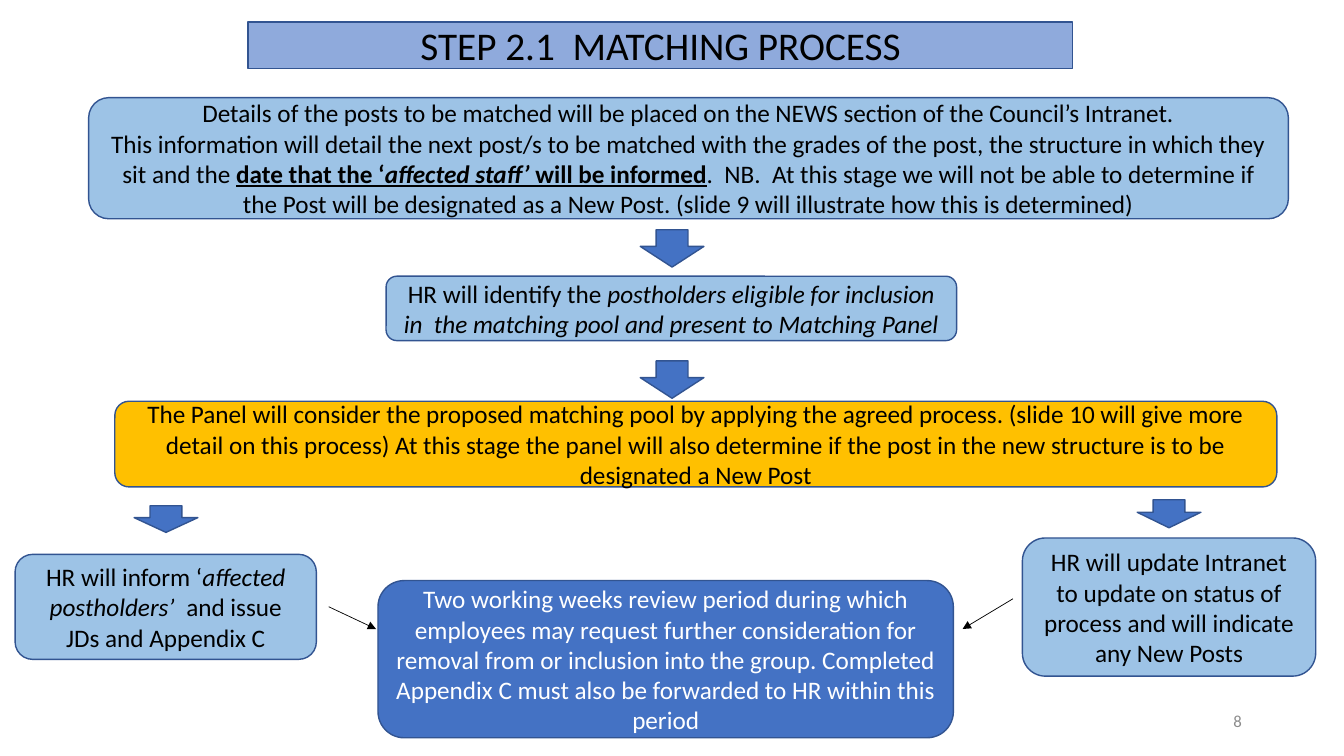
from dataclasses import dataclass

from lxml import etree
from pptx import Presentation
from pptx.dml import color as col
from pptx.enum import shapes as sh, text as tx
from pptx.oxml import ns
from pptx.util import Pt


@dataclass(frozen=True)
class Theme:
    """Colours, type sizes and font of the deck."""
    pale: str = "9DC3E6"
    head: str = "8FAADC"
    gold: str = "FFC000"
    blue: str = "4472C4"
    edge: str = "325491"
    ink: str = "000000"
    white: str = "FFFFFF"
    grey: str = "8C8C8C"
    font: str = "Calibri"
    big: int = 28
    body: int = 18
    small: int = 12


T = Theme()
NEWS = [
    [("Details of the posts to be matched will be placed on the NEWS section of the Council’s Intranet.", "")],
    [("This information will detail the next post/s to be matched with the grades of the post, "
      "the structure in which they sit and the ", ""),
     ("date that the ‘", "bu"), ("affected staff’ ", "biu"), ("will be informed", "bu"),
     (".  NB.  At this stage we will not be able to determine if the Post will be designated "
      "as a New Post. (slide 9 will illustrate how this is determined)", "")],
]
POOL = [[("HR will identify the ", ""),
         ("postholders eligible for inclusion in  the matching pool and present to Matching Panel", "i")]]
PANEL = [[("The Panel will consider the proposed matching pool by applying the agreed process. "
           "(slide 10 will give more detail on this process) At this stage the panel will also determine "
           "if the post in the new structure is to be designated a New Post", "")]]
INFORM = [[("HR will inform ‘", ""), ("affected postholders’  ", "i"), ("and issue JDs and Appendix C", "")]]
UPDATE = [[("HR will update Intranet to update on status of process and will indicate any New Posts", "")]]
REVIEW = [[("Two working weeks review period during which employees may request further consideration "
            "for removal from or inclusion into the group. Completed Appendix C must also be forwarded "
            "to HR within this period", "")]]


def rgb(code):
    """Turn a hex code into a colour."""
    return col.RGBColor.from_string(code)


def write(shape, paras, size=T.body, ink=T.ink, align=tx.PP_ALIGN.CENTER):
    """Fill a shape with paragraphs of (text, flags) runs; flags are b, i and u."""
    frame = shape.text_frame
    frame.word_wrap = True
    frame.auto_size = tx.MSO_AUTO_SIZE.NONE
    frame.vertical_anchor = tx.MSO_ANCHOR.MIDDLE
    for n, runs in enumerate(paras):
        para = frame.add_paragraph() if n else frame.paragraphs[0]
        para.alignment = align
        for words, flags in runs:
            run = para.add_run()
            run.text = words
            font = run.font
            font.name, font.size = T.font, Pt(size)
            font.color.rgb = rgb(ink)
            font.bold, font.italic, font.underline = ("b" in flags, "i" in flags, "u" in flags)


def paint(shape, fill):
    """Give a shape its fill and the common edge."""
    shape.fill.solid()
    shape.fill.fore_color.rgb = rgb(fill)
    shape.line.color.rgb = rgb(T.edge)
    shape.line.width = Pt(1)
    shape.shadow.inherit = False


def draw(slide, kind, box, fill):
    """Add a painted preset shape."""
    shape = slide.shapes.add_shape(kind, *map(Pt, box))
    paint(shape, fill)
    return shape


def card(slide, box, paras, fill=T.pale, ink=T.ink):
    """Add a rounded box with text."""
    write(draw(slide, sh.MSO_SHAPE.ROUNDED_RECTANGLE, box, fill), paras, ink=ink)


def drop(slide, left, top, high):
    """Add a block arrow that points down."""
    arrow = draw(slide, sh.MSO_SHAPE.DOWN_ARROW, (left, top, 45.5, high), T.blue)
    arrow.adjustments[1] = 0.553


def link(slide, start, end):
    """Add a thin line with an arrowhead at its end."""
    line = slide.shapes.add_connector(sh.MSO_CONNECTOR.STRAIGHT, *map(Pt, start + end))
    line.line.color.rgb = rgb(T.ink)
    line.line.width = Pt(0.5)
    etree.SubElement(line.line._get_or_add_ln(), ns.qn("a:tailEnd"), type="triangle")
    etree.SubElement(line._element.spPr, ns.qn("a:effectLst"))


def header(slide, box):
    """Turn the title placeholder into the rounded banner."""
    title = slide.shapes.title
    title.left, title.top, title.width, title.height = map(Pt, box)
    form = etree.Element(ns.qn("a:prstGeom"), prst="roundRect")
    etree.SubElement(form, ns.qn("a:avLst"))
    title._element.spPr.insert(1, form)
    paint(title, T.head)
    write(title, [[("STEP 2.1  MATCHING PROCESS", "")]], size=T.big)


def chain(slide, box):
    """Place the three stacked steps and the arrows between them."""
    x, y, w, h = box
    card(slide, (x, y, w, 86.5), NEWS)
    card(slide, (x + 212.5, y + 127.5, 407.5, 46), POOL)
    card(slide, (x + 18.7, y + h - 61.2, 830, 61.2), PANEL, fill=T.gold)
    for top in (94.3, 188):
        drop(slide, x + 394, y + top, 26.7)


def results(slide, box):
    """Place the two outcomes that lead to the review period."""
    x, y, w, h = box
    drop(slide, x + 85, y + 4.3, 19)
    drop(slide, x + 801.5, y, 20)
    card(slide, (x, y + 39, 215.2, 75), INFORM)
    card(slide, (x + w - 209.5, y + 27.3, 209.5, 98.7), UPDATE)
    card(slide, (x + 259.2, y + h - 112.3, 411, 112.3), REVIEW, fill=T.blue, ink=T.white)
    link(slide, (x + 224, y + 76.4), (x + 257.8, y + 92.3))
    link(slide, (x + 712.8, y + 70.7), (x + 676.8, y + 92.3))


def footer(slide, box):
    """Place the slide number."""
    note = slide.shapes.add_textbox(*map(Pt, box))
    write(note, [[("8", "")]], size=T.small, ink=T.grey, align=tx.PP_ALIGN.RIGHT)


def main():
    """Build and save the slide."""
    deck = Presentation()
    deck.slide_width, deck.slide_height = Pt(960), Pt(540)
    slide = deck.slides.add_slide(deck.slide_layouts[5])
    header(slide, (177.2, 15.8, 589, 33.2))
    chain(slide, (63.3, 69.8, 857, 278))
    results(slide, (10.8, 357, 929, 170))
    footer(slide, (678.2, 500.4, 216, 28.8))
    deck.save("out.pptx")


if __name__ == "__main__":
    main()
